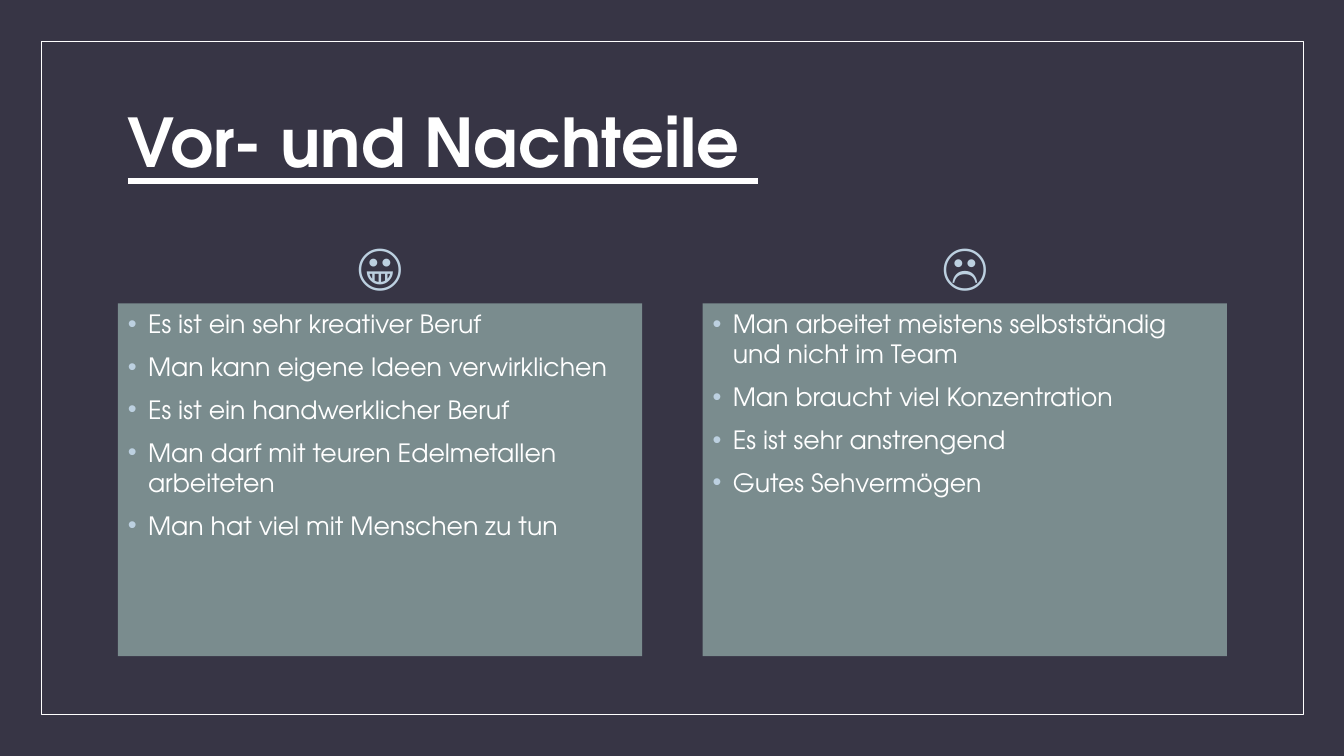
from dataclasses import dataclass

from lxml import etree
from pptx import Presentation
from pptx.dml.color import RGBColor
from pptx.enum import shapes, text
from pptx.oxml.ns import qn
from pptx.util import Inches, Pt


@dataclass(frozen=True)
class Theme:
    font: str = "TeX Gyre Adventor"
    background: str = "373545"
    panel: str = "7A8C8E"
    light: str = "FFFFFF"
    accent: str = "BCD0E0"
    title_size: int = 48
    face_size: int = 36
    body_size: int = 18


THEME = Theme()
LEFT, COLUMN_WIDTH, COLUMN_STEP = 1.17, 5.2, 5.8

COLUMNS = [
    ("😀", [
        "Es ist ein sehr kreativer Beruf",
        "Man kann eigene Ideen verwirklichen",
        "Es ist ein handwerklicher Beruf",
        "Man darf mit teuren Edelmetallen arbeiteten",
        "Man hat viel mit Menschen zu tun",
    ]),
    ("☹️", [
        "Man arbeitet meistens selbstständig und nicht im Team",
        "Man braucht viel Konzentration",
        "Es ist sehr anstrengend",
        "Gutes Sehvermögen",
    ]),
]


def rgb(color):
    return RGBColor.from_string(color)


def add_rect(s, x, y, w, h, fill=None, line=None):
    sp = s.shapes.add_shape(shapes.MSO_SHAPE.RECTANGLE,
                            Inches(x), Inches(y), Inches(w), Inches(h))
    sp.shadow.inherit = False
    if fill:
        sp.fill.solid()
        sp.fill.fore_color.rgb = rgb(fill)
    else:
        sp.fill.background()
    if line:
        sp.line.color.rgb = rgb(line)
        sp.line.width = Pt(0.5)
    else:
        sp.line.fill.background()
    return sp


def add_box(s, x, y, w, h):
    return s.shapes.add_textbox(Inches(x), Inches(y), Inches(w), Inches(h))


def set_bullet(p, color, indent=0.2):
    pPr = p._p.get_or_add_pPr()
    pPr.set("marL", str(Inches(indent)))
    pPr.set("indent", str(-Inches(indent)))
    bullet_color = etree.SubElement(pPr, qn("a:buClr"))
    etree.SubElement(bullet_color, qn("a:srgbClr"), val=color)
    etree.SubElement(pPr, qn("a:buFont"), typeface="Arial")
    etree.SubElement(pPr, qn("a:buChar"), char="•")


def write(sp, lines, size, color=THEME.light, bold=False, underline=False,
          align=text.PP_ALIGN.LEFT, anchor=text.MSO_ANCHOR.MIDDLE,
          spacing=1.0, before=0, bullet=None):
    """Fill a shape with one paragraph per line; bullet is the bullet colour."""
    tf = sp.text_frame
    tf.word_wrap = True
    tf.vertical_anchor = anchor
    for i, line in enumerate(lines):
        p = tf.add_paragraph() if i else tf.paragraphs[0]
        p.alignment = align
        p.line_spacing = spacing
        p.space_before = Pt(before)
        if bullet:
            set_bullet(p, bullet)
        r = p.add_run()
        r.text = line
        r.font.name = THEME.font
        r.font.size = Pt(size)
        r.font.color.rgb = rgb(color)
        r.font.bold = bold
        r.font.underline = underline


def add_column(s, x, face, points):
    write(add_box(s, x, 2.27, COLUMN_WIDTH, 0.7), [face], THEME.face_size,
          color=THEME.accent, align=text.PP_ALIGN.CENTER)
    panel = add_rect(s, x, 3.01, COLUMN_WIDTH, 3.5, fill=THEME.panel)
    write(panel, points, THEME.body_size, anchor=text.MSO_ANCHOR.TOP,
          before=9, bullet=THEME.accent)


def main():
    prs = Presentation()
    prs.slide_width, prs.slide_height = Inches(13.33), Inches(7.5)
    s = prs.slides.add_slide(prs.slide_layouts[6])
    s.background.fill.solid()
    s.background.fill.fore_color.rgb = rgb(THEME.background)

    add_rect(s, 0.41, 0.41, 12.52, 6.68, line=THEME.light)
    write(add_box(s, LEFT, 0.7, 11, 1.5), ["Vor- und Nachteile "],
          THEME.title_size, bold=True, underline=True, spacing=0.9)
    for i, (face, points) in enumerate(COLUMNS):
        add_column(s, LEFT + i * COLUMN_STEP, face, points)

    prs.save("out.pptx")


if __name__ == "__main__":
    main()
